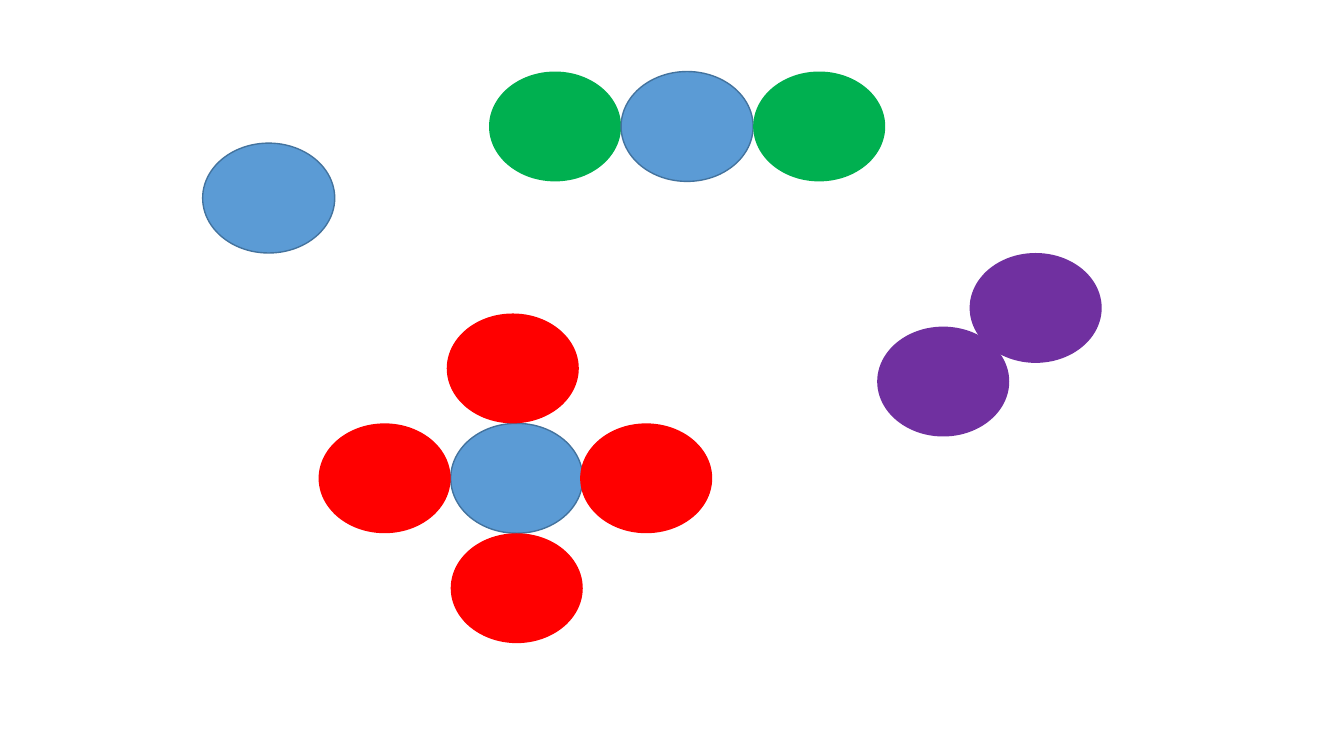
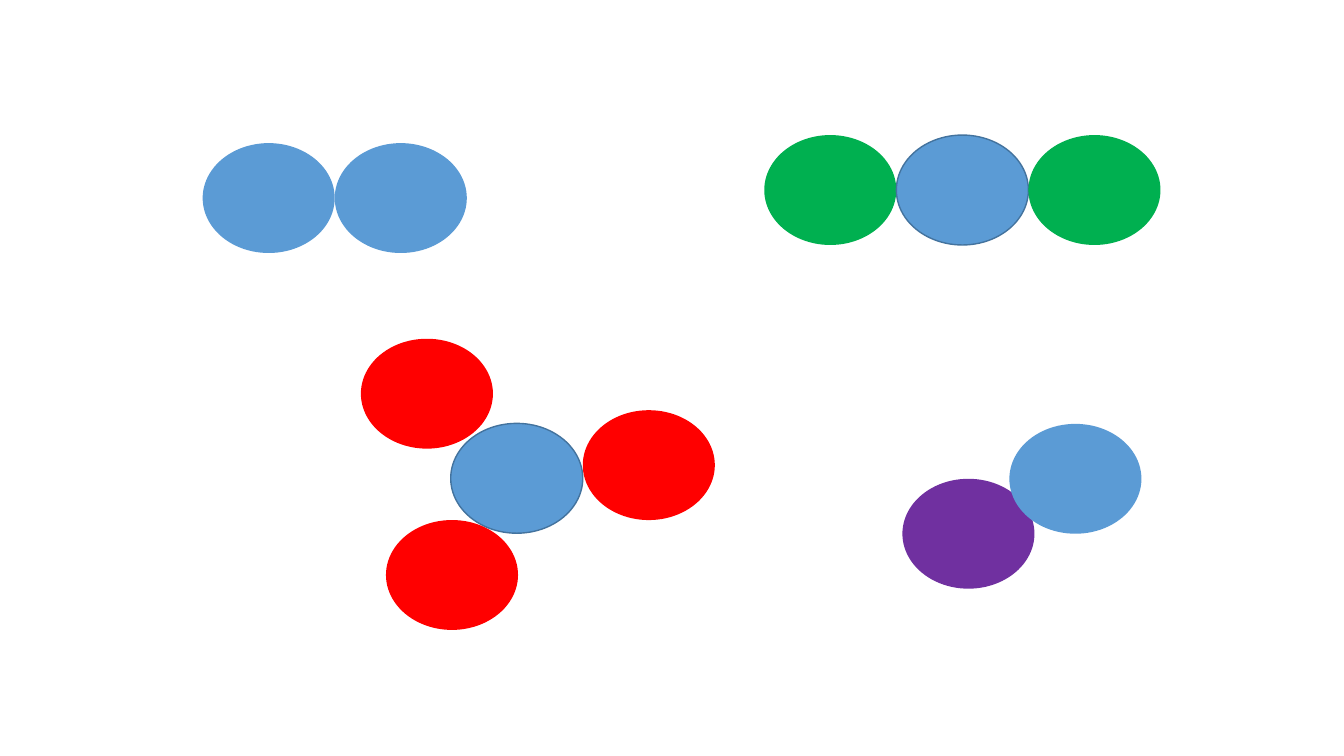
from pptx import Presentation
from pptx.dml.color import RGBColor
from pptx.enum.shapes import MSO_SHAPE
from pptx.util import Inches, Pt

OVAL = MSO_SHAPE.OVAL
BLANK_LAYOUT = 6

SLIDE_WIDTH, SLIDE_HEIGHT = 13.33, 7.5
ATOM_WIDTH, ATOM_HEIGHT = 1.31, 1.09

BLUE = RGBColor(0x5B, 0x9B, 0xD5)
DARK_BLUE = RGBColor(0x43, 0x73, 0x9E)
RED = RGBColor(0xFF, 0x00, 0x00)
GREEN = RGBColor(0x00, 0xB0, 0x50)
PURPLE = RGBColor(0x70, 0x30, 0xA0)

# Corner of the central atom of the red molecules on both slides
CENTRE = (4.47, 4.2)


def add_atom(slide, left, top, fill, outline=None):
    """Draw one ellipse, with a thin outline if a colour is given."""
    shape = slide.shapes.add_shape(
        OVAL, Inches(left), Inches(top), Inches(ATOM_WIDTH), Inches(ATOM_HEIGHT))
    shape.shadow.inherit = False
    shape.fill.solid()
    shape.fill.fore_color.rgb = fill
    if outline is None:
        shape.line.fill.background()
    else:
        shape.line.color.rgb = outline
        shape.line.width = Pt(1)


def add_molecule(slide, corner, atoms):
    """Place atoms (column, row, fill, optional outline) in atom sizes from a corner."""
    left, top = corner
    for column, row, *colours in atoms:
        add_atom(slide, left + column * ATOM_WIDTH, top + row * ATOM_HEIGHT, *colours)


def add_green_chain(slide, corner):
    """Draw a blue atom between two green ones."""
    add_molecule(slide, corner, [
        (0, 0, GREEN), (1, 0, BLUE, DARK_BLUE), (2, 0, GREEN)])


def add_red_cluster(slide, neighbours):
    """Draw a central blue atom with red neighbours at the given offsets."""
    add_molecule(slide, CENTRE, [
        (0, 0, BLUE, DARK_BLUE), *((column, row, RED) for column, row in neighbours)])


def build_first_slide(slide):
    # Single atom
    add_molecule(slide, (2.01, 1.42), [(0, 0, BLUE, DARK_BLUE)])
    # Purple pair
    add_molecule(slide, (8.7, 3.24), [(0, 0, PURPLE), (0.7, -0.67, PURPLE)])
    # Cross of five atoms
    add_red_cluster(slide, [(-0.03, -1), (-1, 0), (0.98, 0), (0, 1)])
    # Chain of three atoms
    add_green_chain(slide, (4.85, 0.71))


def build_second_slide(slide):
    # Blue pair
    add_molecule(slide, (2.01, 1.42), [(0, 0, BLUE), (1, 0, BLUE)])
    # Three-armed molecule
    add_red_cluster(slide, [(-0.68, -0.77), (1, -0.12), (-0.49, 0.88)])
    # Chain of three atoms
    add_green_chain(slide, (7.58, 1.34))
    # Mixed pair
    add_molecule(slide, (8.95, 4.75), [(0, 0, PURPLE), (0.81, -0.5, BLUE)])


def main():
    presentation = Presentation()
    presentation.slide_width = Inches(SLIDE_WIDTH)
    presentation.slide_height = Inches(SLIDE_HEIGHT)
    for build_slide in (build_first_slide, build_second_slide):
        build_slide(presentation.slides.add_slide(
            presentation.slide_layouts[BLANK_LAYOUT]))
    presentation.save("out.pptx")


if __name__ == "__main__":
    main()
